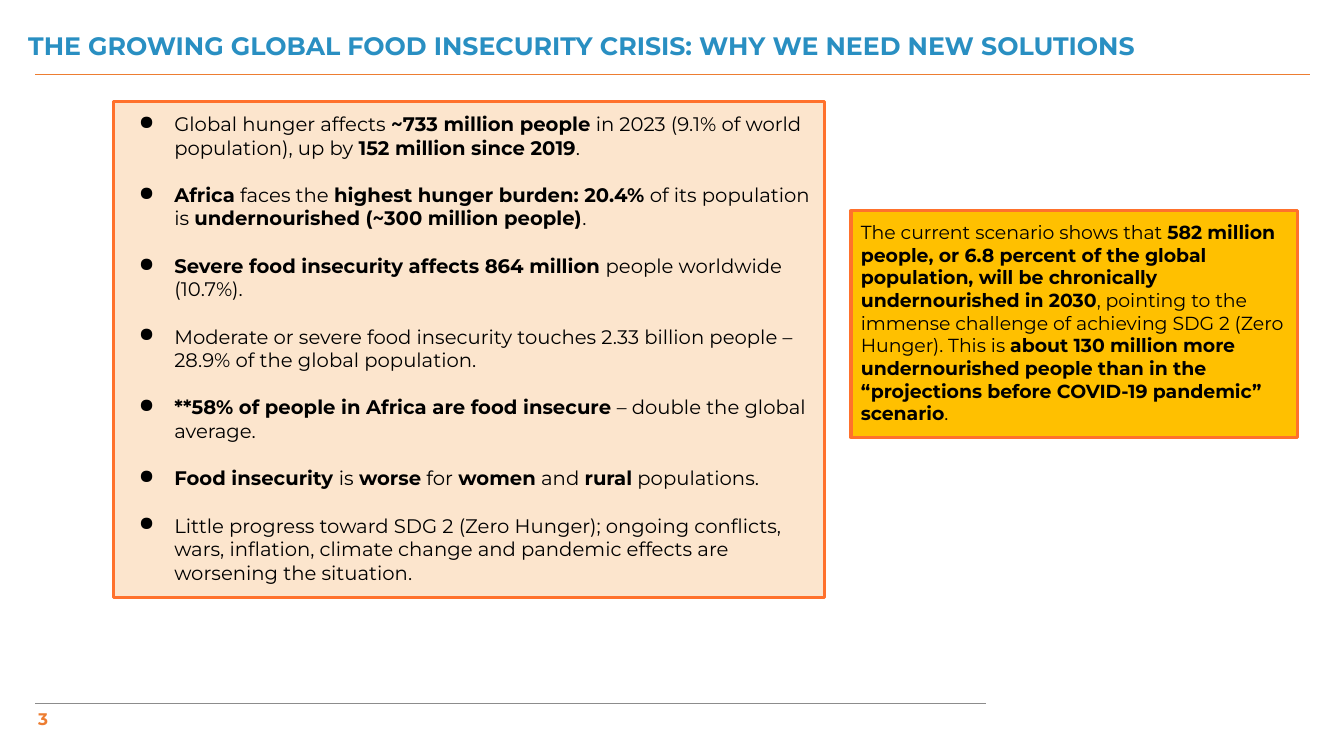
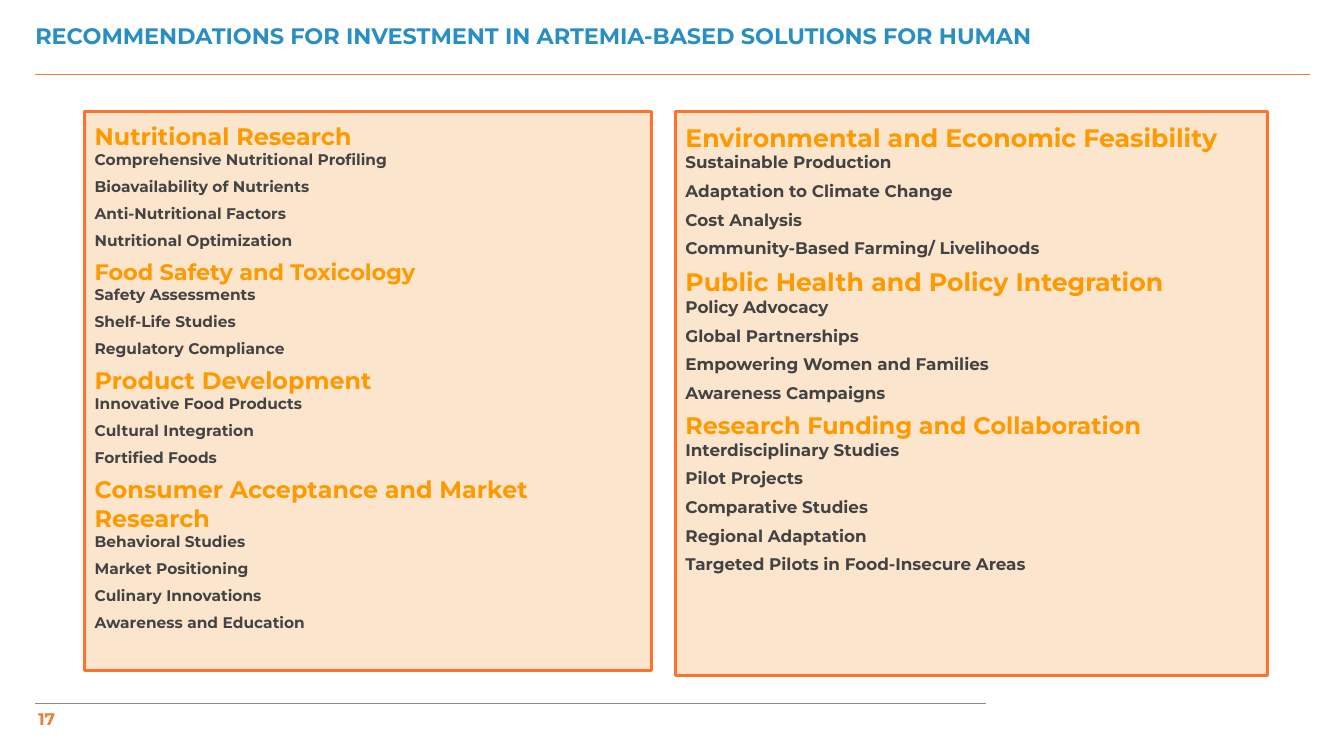
import pptx
import pptx.util
import pptx.dml.color
import pptx.enum.shapes
import pptx.enum.text
import pptx.oxml.ns
import lxml.etree

RGB = pptx.dml.color.RGBColor
Pt = pptx.util.Pt
PX = 9144  # EMU per px, 100 px to the inch

BLUE = RGB(0x29, 0x8F, 0xC2)
ORANGE = RGB(0xED, 0x7D, 0x31)
GRAY = RGB(0x8C, 0x8C, 0x8C)
EDGE = RGB(0xFF, 0x71, 0x2C)
PEACH = RGB(0xFC, 0xE5, 0xCD)
GOLD = RGB(0xFF, 0xC0, 0x00)
AMBER = RGB(0xFF, 0x99, 0x00)
DARK = RGB(0x43, 0x43, 0x43)
BLACK = RGB(0, 0, 0)


class Deck:
    font = "Montserrat"

    def __init__(self):
        self.prs = pptx.Presentation()
        self.prs.slide_width = 1333 * PX
        self.prs.slide_height = 750 * PX
        self.slide = None

    def page(self, number, title, size, left, spacing):
        """Start a slide with its title, rules and page number."""
        self.slide = self.prs.slides.add_slide(self.prs.slide_layouts[6])
        self.rule(35, 1299, 74, ORANGE)
        self.rule(35, 978, 698, GRAY)
        head = self.label(left, 33, 1222, 41, title, size, BLUE)
        head.margin_left = head.margin_right = 0
        head.margin_top = head.margin_bottom = 0
        head.paragraphs[0].line_spacing = spacing
        foot = self.label(28, 702, 56, 23, number, 12, ORANGE)
        foot.vertical_anchor = pptx.enum.text.MSO_ANCHOR.MIDDLE

    def rule(self, start, end, y, color):
        kind = pptx.enum.shapes.MSO_CONNECTOR.STRAIGHT
        line = self.slide.shapes.add_connector(
            kind, start * PX, y * PX, end * PX, y * PX)
        line.line.color.rgb = color
        line.line.width = Pt(0.75)
        lxml.etree.SubElement(line._element.spPr,
                              pptx.oxml.ns.qn("a:effectLst"))

    def label(self, x, y, w, h, text, size, color):
        box = self.slide.shapes.add_textbox(x * PX, y * PX, w * PX, h * PX)
        frame = box.text_frame
        frame.word_wrap = True
        frame.text = text
        self.style(frame.paragraphs[0].runs[0], size, color, True)
        return frame

    def style(self, run, size, color, bold):
        run.font.name = self.font
        run.font.size = Pt(size)
        run.font.color.rgb = color
        run.font.bold = bold

    def panel(self, x, y, w, h, fill):
        """Draw a framed box and return its text frame."""
        kind = pptx.enum.shapes.MSO_SHAPE.RECTANGLE
        box = self.slide.shapes.add_shape(kind, x * PX, y * PX, w * PX, h * PX)
        box.shadow.inherit = False
        box.fill.solid()
        box.fill.fore_color.rgb = fill
        box.line.color.rgb = EDGE
        box.line.width = Pt(2.25)
        frame = box.text_frame
        frame.word_wrap = True
        frame.vertical_anchor = pptx.enum.text.MSO_ANCHOR.TOP
        frame.margin_left = frame.margin_right = 10 * PX
        frame.margin_top = frame.margin_bottom = 10 * PX
        return frame

    def para(self, frame, first, gap=0):
        """Return the first or a new left-aligned paragraph."""
        para = frame.paragraphs[0] if first else frame.add_paragraph()
        para.alignment = pptx.enum.text.PP_ALIGN.LEFT
        if gap and not first:
            para.space_before = Pt(gap)
        return para

    def rich(self, para, text, size):
        """Fill a paragraph; parts between bars are bold."""
        for i, part in enumerate(text.split("|")):
            if part:
                run = para.add_run()
                run.text = part
                self.style(run, size, BLACK, i % 2 == 1)

    def bullet(self, para):
        props = para._p.get_or_add_pPr()
        props.set("marL", str(50 * PX))
        props.set("indent", str(-35 * PX))
        qn = pptx.oxml.ns.qn
        tint = lxml.etree.SubElement(props, qn("a:buClr"))
        lxml.etree.SubElement(tint, qn("a:srgbClr")).set("val", str(BLACK))
        lxml.etree.SubElement(props, qn("a:buChar")).set("char", "●")

    def bullets(self, frame, items, size, gap):
        for i, text in enumerate(items):
            para = self.para(frame, i == 0, gap)
            self.bullet(para)
            self.rich(para, text, size)

    def topics(self, frame, groups, size):
        """List headings, each with its items beneath."""
        for g, (head, big, items) in enumerate(groups):
            para = self.para(frame, g == 0, 6)
            para.text = head
            self.style(para.runs[0], big, AMBER, True)
            for i, item in enumerate(items):
                para = self.para(frame, False, 6 if i else 0)
                para.text = item
                self.style(para.runs[0], size, DARK, True)


FACTS = [
    "Global hunger affects |~733 million people| in 2023 (9.1% of world "
    "population), up by |152 million since 2019|.",
    "|Africa| faces the |highest hunger burden: 20.4%| of its population is "
    "|undernourished (~300 million people)|.",
    "|Severe food insecurity affects 864 million| people worldwide (10.7%).",
    "Moderate or severe food insecurity touches 2.33 billion people – 28.9% "
    "of the global population.",
    "|**58% of people in Africa are food insecure| – double the global "
    "average.",
    "|Food insecurity |is |worse| for |women| and |rural| populations.",
    "Little progress toward SDG 2 (Zero Hunger); ongoing conflicts, wars, "
    "inflation, climate change and pandemic effects are worsening the "
    "situation.",
]

OUTLOOK = (
    "The current scenario shows that |582 million people, or 6.8 percent of "
    "the global population, will be chronically undernourished in 2030|, "
    "pointing to the immense challenge of achieving SDG 2 (Zero Hunger). "
    "This is |about 130 million more undernourished people than in the "
    "“projections before COVID-19 pandemic” scenario|."
)

# Heading, heading size, items
SCIENCE = [
    ("Nutritional Research", 17, [
        "Comprehensive Nutritional Profiling", "Bioavailability of Nutrients",
        "Anti-Nutritional Factors", "Nutritional Optimization"]),
    ("Food Safety and Toxicology", 16, [
        "Safety Assessments", "Shelf-Life Studies", "Regulatory Compliance"]),
    ("Product Development", 17, [
        "Innovative Food Products", "Cultural Integration",
        "Fortified Foods"]),
    ("Consumer Acceptance and Market Research", 17, [
        "Behavioral Studies", "Market Positioning", "Culinary Innovations",
        "Awareness and Education"]),
]

POLICY = [
    ("Environmental and Economic Feasibility", 18, [
        "Sustainable Production", "Adaptation to Climate Change",
        "Cost Analysis", "Community-Based Farming/ Livelihoods"]),
    ("Public Health and Policy Integration", 18, [
        "Policy Advocacy", "Global Partnerships",
        "Empowering Women and Families", "Awareness Campaigns"]),
    ("Research Funding and Collaboration", 17, [
        "Interdisciplinary Studies", "Pilot Projects", "Comparative Studies",
        "Regional Adaptation", "Targeted Pilots in Food-Insecure Areas"]),
]


def main():
    deck = Deck()

    # Food insecurity crisis
    deck.page("3", "THE GROWING GLOBAL FOOD INSECURITY CRISIS: "
              "WHY WE NEED NEW SOLUTIONS", 18, 28, 0.9)
    note = deck.panel(844, 209, 443, 225, GOLD)
    deck.rich(deck.para(note, True), OUTLOOK, 13.5)
    deck.bullets(deck.panel(113, 101, 705, 492, PEACH), FACTS, 14, 17)

    # Investment recommendations
    deck.page("17", "RECOMMENDATIONS FOR INVESTMENT IN ARTEMIA-BASED "
              "SOLUTIONS FOR HUMAN", 16, 35, 0.5)
    deck.topics(deck.panel(84, 111, 562, 554, PEACH), SCIENCE, 11)
    deck.topics(deck.panel(670, 111, 587, 559, PEACH), POLICY, 12)

    deck.prs.save("out.pptx")


if __name__ == "__main__":
    main()
